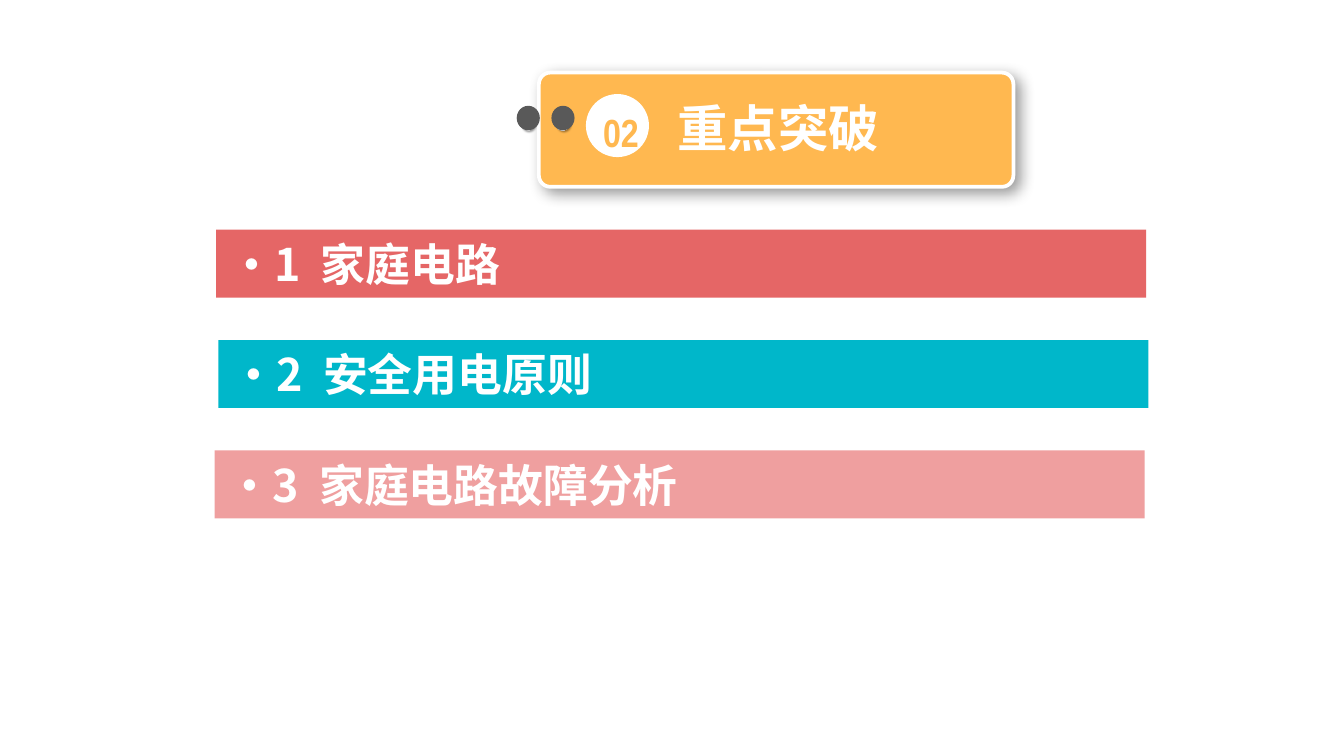
import pptx
import pptx.util
import pptx.dml.color
import pptx.enum.shapes
import pptx.enum.text
import pptx.oxml.ns
from lxml import etree

Pt = pptx.util.Pt
qn = pptx.oxml.ns.qn
SHAPE = pptx.enum.shapes.MSO_SHAPE
ALIGN = pptx.enum.text.PP_ALIGN

THEME = {
    "white": "FFFFFF", "card": "FFB850", "pin": "595959", "shadow": "000000",
    "red": "E56666", "teal": "00B7CA", "pink": "EF9F9F",
    "cjk": "Noto Sans CJK SC", "narrow": "Arial Narrow",
    "title": 27, "number": 21, "item": 24,
}
SOCKET_STOPS = [(0, "FFFFFF"), (17, "A6A6A6"), (35, "F2F2F2"),
                (55, "A6A6A6"), (75, "F2F2F2"), (100, "A6A6A6")]

TITLE = "重点突破"
NUMBER = "02"
# number, heading, colour, left edge
ITEMS = [
    ("1", "家庭电路", "red", 115.8),
    ("2", "安全用电原则", "teal", 117),
    ("3", "家庭电路故障分析", "pink", 115),
]
BAR_TOP, BAR_STEP, BAR_W, BAR_H = 123.1, 59.1, 498.2, 36.4
PIN_LEFTS = (295.4, 276.8)
PIN_TOP, PIN_W, PIN_H, SOCKET = 56.7, 12.4, 13.1, 7.2


def rgb(name):
    return pptx.dml.color.RGBColor.from_string(THEME[name])


def add_shape(s, kind, box, fill=None):
    sp = s.shapes.add_shape(kind, *map(Pt, box))
    sp.shadow.inherit = False
    sp.line.fill.background()
    if fill:
        sp.fill.solid()
        sp.fill.fore_color.rgb = rgb(fill)
    return sp


def add_shadow(sp, blur, dist):
    effects = sp._element.spPr.find(qn("a:effectLst"))
    shadow = etree.SubElement(effects, qn("a:outerShdw"), blurRad=str(Pt(blur)),
                              dist=str(Pt(dist)), dir="2700000", algn="tl",
                              rotWithShape="0")
    color = etree.SubElement(shadow, qn("a:srgbClr"), val=THEME["shadow"])
    etree.SubElement(color, qn("a:alpha"), val="40000")


def set_gradient(sp, stops, angle):
    sp.fill.gradient()
    sp.fill.gradient_angle = angle
    stop_list = sp._element.spPr.find(".//" + qn("a:gsLst"))
    for old in list(stop_list):
        stop_list.remove(old)
    for pos, color in stops:
        stop = etree.SubElement(stop_list, qn("a:gs"), pos=str(pos * 1000))
        etree.SubElement(stop, qn("a:srgbClr"), val=color)


def add_run(p, text, size, color="white", font="cjk", spacing=0):
    r = p.add_run()
    r.text = text
    r.font.size = Pt(THEME[size])
    r.font.bold = True
    r.font.color.rgb = rgb(color)
    r.font.name = THEME[font]
    rPr = r._r.get_or_add_rPr()
    etree.SubElement(rPr, qn("a:ea"), typeface=THEME[font])
    if spacing:
        rPr.set("spc", str(round(spacing * 100)))


def write(sp, text, align=ALIGN.CENTER, gap=0, **fmt):
    """Fill sp with one line; gap widens each space by that many points."""
    tf = sp.text_frame
    tf.word_wrap = True
    tf.auto_size = pptx.enum.text.MSO_AUTO_SIZE.NONE
    tf.vertical_anchor = pptx.enum.text.MSO_ANCHOR.MIDDLE
    p = tf.paragraphs[0]
    p.alignment = align
    for i, word in enumerate(text.split(" ")):
        if i:
            add_run(p, " ", spacing=gap, **fmt)
        add_run(p, word, **fmt)


def add_card(s):
    card = add_shape(s, SHAPE.ROUNDED_RECTANGLE, (288.7, 38.9, 254.2, 61.2), "card")
    card.adjustments[0] = 0.1
    card.line.color.rgb = rgb("white")
    card.line.width = Pt(2)
    add_shadow(card, 8, 4)

    for left in PIN_LEFTS:
        socket = add_shape(s, SHAPE.OVAL, (left + 2.4, PIN_TOP + 6, SOCKET, SOCKET))
        socket.rotation = 270
        set_gradient(socket, SOCKET_STOPS, 315)
        add_shadow(socket, 1, 1)
        add_shape(s, SHAPE.OVAL, (left, PIN_TOP, PIN_W, PIN_H), "pin")

    title = s.shapes.title
    title.left, title.top, title.width, title.height = map(Pt, (327.6, 48.2, 178.6, 40.3))
    write(title, TITLE, size="title")
    s.shapes._spTree.append(title._element)  # in front of the card

    add_shape(s, SHAPE.OVAL, (313.9, 50.4, 33.8, 33.8), "white")
    number = s.shapes.add_textbox(*map(Pt, (312.5, 54.6, 40.3, 32.4)))
    write(number, NUMBER, size="number", color="card", font="narrow")


def add_items(s):
    for i, (number, heading, color, left) in enumerate(ITEMS):
        bar = add_shape(s, SHAPE.RECTANGLE,
                        (left, BAR_TOP + i * BAR_STEP, BAR_W, BAR_H), color)
        write(bar, f"·{number} {heading}", align=ALIGN.LEFT, gap=5.4, size="item")


def main():
    prs = pptx.Presentation()
    prs.slide_width, prs.slide_height = Pt(720), Pt(405)
    s = prs.slides.add_slide(prs.slide_layouts[5])
    add_card(s)
    add_items(s)
    prs.save("out.pptx")


if __name__ == "__main__":
    main()
